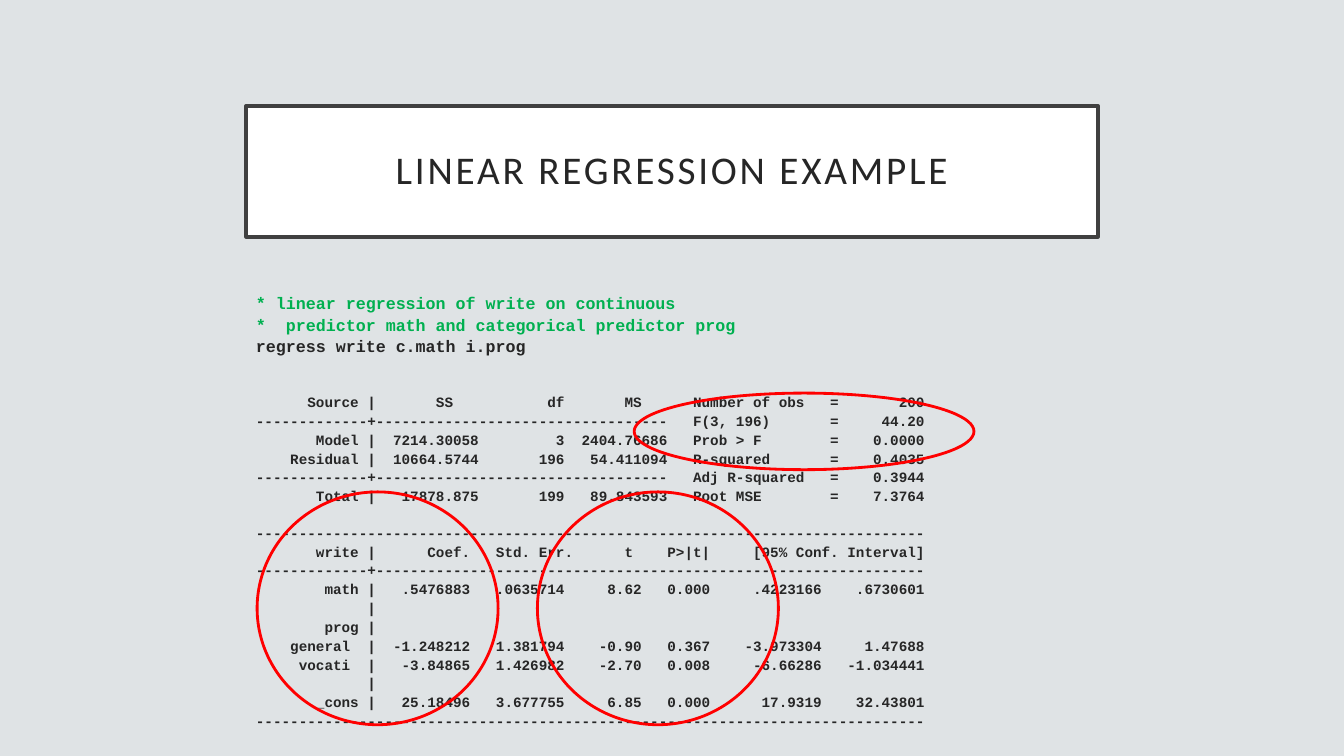
"""Build the linear regression example slide with its program output and highlights."""
import pptx
import pptx.dml.color
import pptx.enum.shapes
import pptx.enum.text
import pptx.util

COLOURS = {
    "background": "DFE3E5",
    "panel": "FFFFFF",
    "border": "404040",
    "text": "262626",
    "comment": "00B050",
    "highlight": "FF0000",
}
inches = pptx.util.Inches
points = pptx.util.Pt


def colour(name):
    return pptx.dml.color.RGBColor.from_string(COLOURS[name])


presentation = pptx.Presentation()
presentation.slide_width = inches(13.33)
presentation.slide_height = inches(7.5)
slide = presentation.slides.add_slide(presentation.slide_layouts[5])
slide.background.fill.solid()
slide.background.fill.fore_color.rgb = colour("background")

title = slide.shapes.title
title.left, title.top, title.width, title.height = map(inches, (2.44, 1.05, 8.45, 1.3))
title.fill.solid()
title.fill.fore_color.rgb = colour("panel")
title.line.color.rgb = colour("border")
title.line.width = points(2.5)
frame = title.text_frame
frame.text = "LINEAR REGRESSION EXAMPLE"
frame.word_wrap = True
frame.auto_size = pptx.enum.text.MSO_AUTO_SIZE.NONE
frame.vertical_anchor = pptx.enum.text.MSO_ANCHOR.MIDDLE
frame.margin_left = frame.margin_right = inches(0.2)
frame.margin_top = frame.margin_bottom = inches(0.2)
paragraph = frame.paragraphs[0]
paragraph.alignment = pptx.enum.text.PP_ALIGN.CENTER
paragraph.line_spacing = 0.9
paragraph.font.name = "Calibri"
paragraph.font.size = points(28)
paragraph.font.color.rgb = colour("text")
paragraph.runs[0]._r.get_or_add_rPr().set("spc", "200")

full_rule = "-" * 78
anova_rule = "-" * 13 + "+" + "-" * 34
coefficient_rule = "-" * 13 + "+" + "-" * 64

comments = [
    "* linear regression of write on continuous",
    "*  predictor math and categorical predictor prog",
]
command = ["regress write c.math i.prog"]
anova = [
    "      Source |       SS           df       MS      Number of obs   =       200",
    anova_rule + "   F(3, 196)       =     44.20",
    "       Model |  7214.30058         3  2404.76686   Prob > F        =    0.0000",
    "    Residual |  10664.5744       196   54.411094   R-squared       =    0.4035",
    anova_rule + "   Adj R-squared   =    0.3944",
    "       Total |   17878.875       199   89.843593   Root MSE        =    7.3764",
]
coefficients = [
    full_rule,
    "       write |      Coef.   Std. Err.      t    P>|t|     [95% Conf. Interval]",
    coefficient_rule,
    "        math |   .5476883   .0635714     8.62   0.000     .4223166    .6730601",
    "             |",
    "        prog |",
    "    general  |  -1.248212   1.381794    -0.90   0.367    -3.973304     1.47688",
    "     vocati  |   -3.84865   1.426982    -2.70   0.008     -6.66286   -1.034441",
    "             |",
    "       _cons |   25.18496   3.677755     6.85   0.000      17.9319    32.43801",
    full_rule,
]

LINE_GAP = 2.4
OUTPUT_PITCH = 12.8
blocks = [
    (comments, 11.9, "comment", 0),
    (command, 11.9, "text", 0),
    (anova, 10.2, "text", 2),
    (coefficients, 10.2, "text", 1),
]
output = slide.shapes.add_textbox(*map(inches, (2.44, 2.88, 9.11, 4.39)))
frame = output.text_frame
frame.word_wrap = True
paragraph = frame.paragraphs[0]
for lines, size, colour_name, skipped_lines in blocks:
    for index, line in enumerate(lines):
        if paragraph.text:
            paragraph = frame.add_paragraph()
        paragraph.text = line
        paragraph.line_spacing = 0.9
        gap = skipped_lines * OUTPUT_PITCH if index == 0 else 0
        paragraph.space_before = points(LINE_GAP + gap)
        paragraph.font.name = "Courier New"
        paragraph.font.size = points(size)
        paragraph.font.bold = True
        paragraph.font.color.rgb = colour(colour_name)

highlights = [
    (2.55, 4.88, 2.39, 2.31),
    (5.33, 4.88, 2.39, 2.31),
    (6.29, 3.9, 3.37, 0.76),
]
for bounds in highlights:
    ellipse = slide.shapes.add_shape(pptx.enum.shapes.MSO_SHAPE.OVAL, *map(inches, bounds))
    ellipse.shadow.inherit = False
    ellipse.fill.background()
    ellipse.line.color.rgb = colour("highlight")
    ellipse.line.width = points(2)

presentation.save("out.pptx")
